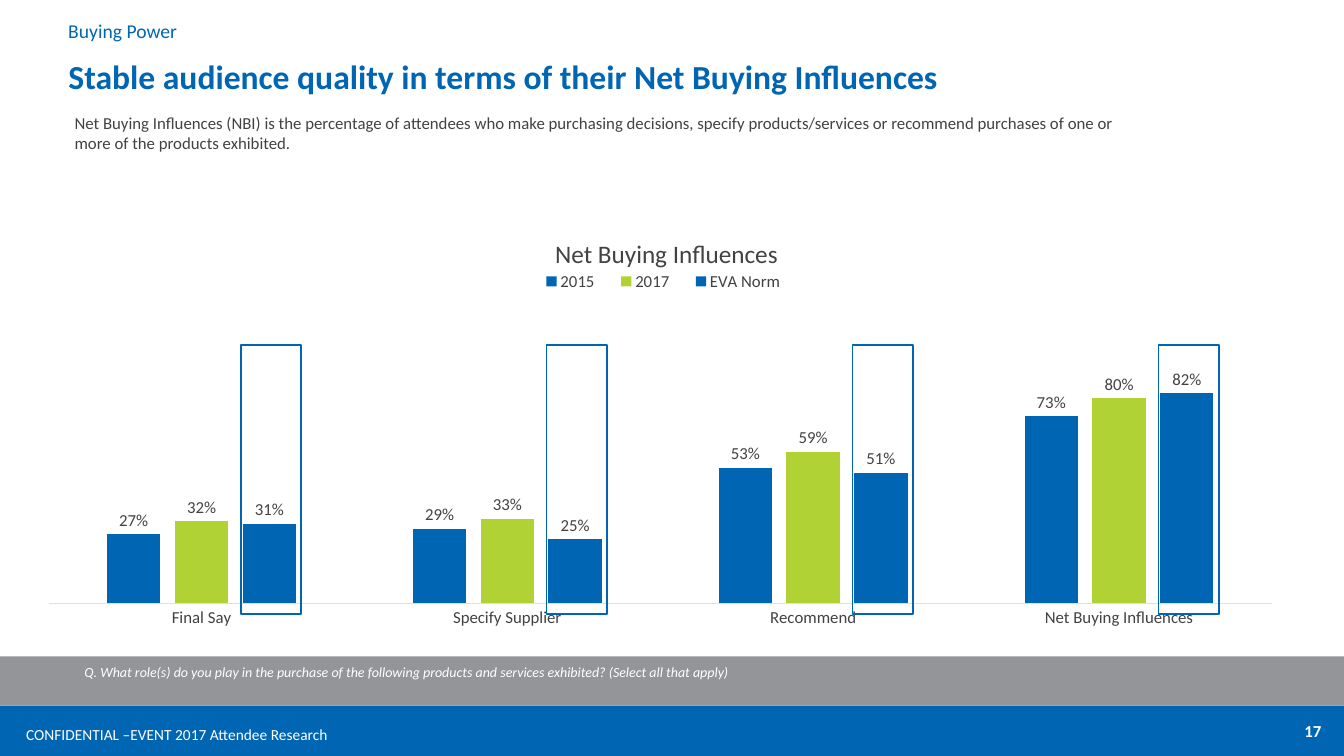
"""Build the Net Buying Influences slide with its chart and norm frames."""
from lxml.etree import SubElement
from pptx import Presentation
from pptx.chart.data import CategoryChartData
from pptx.dml.color import RGBColor
from pptx.enum.chart import XL_CHART_TYPE as ChartType, XL_LABEL_POSITION as LabelPosition
from pptx.enum.chart import XL_LEGEND_POSITION as LegendPosition, XL_TICK_MARK as TickMark
from pptx.enum.shapes import MSO_SHAPE as Shape
from pptx.enum.text import MSO_ANCHOR as Anchor, PP_ALIGN as Align
from pptx.oxml.ns import qn
from pptx.util import Cm, Pt

BLUE = RGBColor(0x00, 0x66, 0xB3)
GREEN = RGBColor(0xB0, 0xD2, 0x35)
GREY = RGBColor(0x93, 0x95, 0x98)
DARK = RGBColor(0x44, 0x41, 0x43)
PALE = RGBColor(0xE0, 0xDF, 0xE0)
WHITE = RGBColor(0xFF, 0xFF, 0xFF)
FONT = "Calibri"


def write(box, text, size=12, color=DARK, bold=False, italic=False,
          align=Align.LEFT, anchor=Anchor.TOP, spacing=1.0):
    frame = box.text_frame
    frame.word_wrap = True
    frame.vertical_anchor = anchor
    para = frame.paragraphs[0]
    para.alignment = align
    para.line_spacing = spacing
    span = para.add_run()
    span.text = text
    font = span.font
    font.name, font.size, font.bold, font.italic = FONT, Pt(size), bold, italic
    font.color.rgb = color


def style(font, size):
    font.name, font.size, font.bold = FONT, Pt(size), False
    font.color.rgb = DARK


deck = Presentation()
deck.slide_width, deck.slide_height = Cm(33.87), Cm(19.05)
page = deck.slides.add_slide(deck.slide_layouts[5])

title = page.shapes.title
title.left, title.top, title.width, title.height = Cm(1.47), Cm(1.5), Cm(30.48), Cm(0.94)
write(title, "Stable audience quality in terms of their Net Buying Influences",
      size=24, color=BLUE, bold=True, anchor=Anchor.MIDDLE, spacing=0.9)

for top, height, color in [(17.78, 1.27, BLUE), (16.54, 1.24, GREY)]:
    band = page.shapes.add_shape(Shape.RECTANGLE, 0, Cm(top), deck.slide_width, Cm(height))
    band.shadow.inherit = False
    band.fill.solid()
    band.fill.fore_color.rgb = color
    band.line.fill.background()

texts = [
    ((1.47, 0.36, 6.53, 0.89), "Buying Power",
     dict(size=14, color=BLUE, anchor=Anchor.MIDDLE, spacing=0.9)),
    ((1.63, 2.72, 27.08, 1.27),
     "Net Buying Influences (NBI) is the percentage of attendees who make purchasing decisions, "
     "specify products/services or recommend purchases of one or more of the products exhibited.",
     dict(size=12)),
    ((1.88, 16.59, 28.63, 0.69),
     "Q. What role(s) do you play in the purchase of the following products and services "
     "exhibited? (Select all that apply)",
     dict(size=10, color=WHITE, italic=True)),
    ((0.41, 18.14, 19.3, 0.74), "CONFIDENTIAL –EVENT 2017 Attendee Research",
     dict(size=11, color=WHITE)),
    ((25.93, 18.03, 7.62, 1.02), "17",
     dict(size=12, color=WHITE, bold=True, align=Align.RIGHT)),
]
for place, text, look in texts:
    write(page.shapes.add_textbox(*map(Cm, place)), text, **look)

data = CategoryChartData(number_format="0%")
data.categories = ["Final Say", "Specify Supplier", "Recommend", "Net Buying Influences"]
data.add_series("2015", [0.27, 0.29, 0.53, 0.73])
data.add_series("2017", [0.32, 0.33, 0.59, 0.8])
data.add_series("EVA Norm", [0.31, 0.25, 0.51, 0.82])
chart = page.shapes.add_chart(ChartType.COLUMN_CLUSTERED, Cm(0.91), Cm(5.28),
                              Cm(31.62), Cm(10.97), data).chart
style(chart.font, 10)

chart.has_title = True
heading = chart.chart_title.text_frame
heading.text = "Net Buying Influences"
style(heading.paragraphs[0].runs[0].font, 18)

chart.has_legend = True
chart.legend.position = LegendPosition.BOTTOM
chart.legend.include_in_layout = False
style(chart.legend.font, 12)

chart.value_axis.visible = False
chart.value_axis.has_major_gridlines = False
chart.value_axis.minimum_scale, chart.value_axis.maximum_scale = 0, 0.9
axis = chart.category_axis
axis.major_tick_mark = TickMark.NONE
axis.format.line.color.rgb = PALE
axis.format.line.width = Pt(0.75)
style(axis.tick_labels.font, 12)

plot = chart.plots[0]
plot.gap_width, plot.overlap = 219, -27
plot.vary_by_categories = False
for series, color in zip(plot.series, [BLUE, GREEN, BLUE]):
    series.format.fill.solid()
    series.format.fill.fore_color.rgb = color
    labels = series.data_labels
    labels.show_value = True
    labels.position = LabelPosition.OUTSIDE_END
    labels.number_format, labels.number_format_is_linked = "0%", False
    style(labels.font, 12)

layouts = [
    ("c:title", 1, dict(xMode="edge", yMode="edge", x=0.41, y=0.05)),
    ("c:legend", 1, dict(xMode="edge", yMode="edge", x=0.39, y=0.13, w=0.22, h=0.07)),
    ("c:plotArea", 0, dict(layoutTarget="inner", xMode="edge", yMode="edge",
                           x=0.01, y=0.375, w=0.975, h=0.53)),
]
for tag, position, settings in layouts:
    part = chart.element.find(".//" + qn(tag))
    for old in part.findall(qn("c:layout")):
        part.remove(old)
    layout = SubElement(part, qn("c:layout"))
    part.insert(position, layout)
    manual = SubElement(layout, qn("c:manualLayout"))
    for name, value in settings.items():
        SubElement(manual, qn("c:" + name)).set("val", str(value))

for column in range(4):
    norm_frame = page.shapes.add_shape(Shape.RECTANGLE, Cm(6.07 + 7.71 * column), Cm(8.69),
                                       Cm(1.52), Cm(6.78))
    norm_frame.shadow.inherit = False
    norm_frame.fill.background()
    norm_frame.line.color.rgb = BLUE
    norm_frame.line.width = Pt(1)

deck.save("out.pptx")
